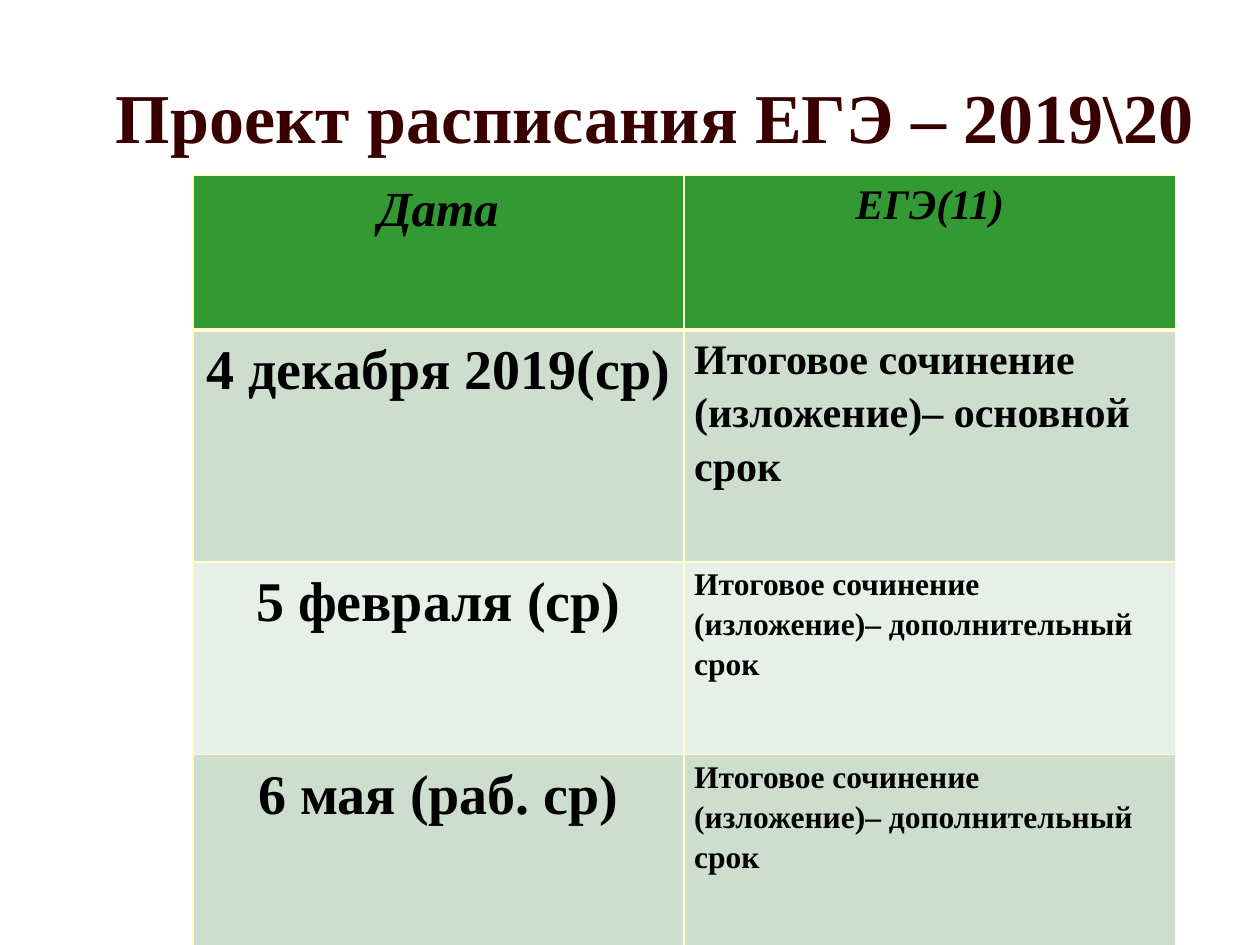
from lxml.etree import SubElement
from pptx import Presentation
from pptx.dml.color import RGBColor
from pptx.enum.text import MSO_ANCHOR, MSO_AUTO_SIZE, PP_ALIGN
from pptx.oxml.ns import qn
from pptx.util import Inches, Pt

FONT = "Times New Roman"
WHITE = RGBColor(0xFF, 0xFF, 0xFF)
MAROON = RGBColor(0x3A, 0x00, 0x00)
BLACK = RGBColor(0x00, 0x00, 0x00)
GREEN = RGBColor(0x33, 0x99, 0x33)
SAGE = RGBColor(0xCE, 0xDE, 0xCE)
PALE = RGBColor(0xE8, 0xEF, 0xE8)
CREAM = RGBColor(0xFF, 0xFF, 0xCC)


def add_text(para, text, size, color, italic=False):
    span = para.add_run()
    span.text = text
    span.font.name = FONT
    span.font.size = Pt(size)
    span.font.bold = True
    span.font.italic = italic
    span.font.color.rgb = color


def add_border(cell, side, width):
    line = SubElement(cell._tc.get_or_add_tcPr(), qn(f"a:ln{side}"), w=str(Pt(width)))
    fill = SubElement(line, qn("a:solidFill"))
    SubElement(fill, qn("a:srgbClr"), val=str(CREAM))


deck = Presentation()
deck.slide_width = Inches(10)
deck.slide_height = Inches(7.5)
page = deck.slides.add_slide(deck.slide_layouts[5])

# Title on a nearly opaque white panel
title = page.shapes.title
title.left, title.top = Inches(0.67), Inches(0.3)
title.width, title.height = Inches(9.05), Inches(1.24)
title.fill.solid()
title.fill.fore_color.rgb = WHITE
panel_color = title.fill._xPr.find(qn("a:solidFill")).find(qn("a:srgbClr"))
SubElement(panel_color, qn("a:alpha"), val="90000")
title.line.color.rgb = WHITE
title.line.width = Pt(1.5)
frame = title.text_frame
frame.word_wrap = True
frame.auto_size = MSO_AUTO_SIZE.NONE
frame.vertical_anchor = MSO_ANCHOR.MIDDLE
frame.paragraphs[0].alignment = PP_ALIGN.CENTER
frame.paragraphs[0].space_before = Pt(0)
add_text(frame.paragraphs[0], "Проект расписания ЕГЭ – 2019\\20", 40, MAROON)

# Exam schedule: row height, fill, then (text, size) for each column
EXTRA = "Итоговое сочинение (изложение)– дополнительный срок"
rows = [
    (1.23, GREEN, ("Дата", 28), ("ЕГЭ(11)", 24)),
    (1.84, SAGE, ("4 декабря 2019(ср)", 32),
     ("Итоговое сочинение (изложение)– основной срок", 24)),
    (1.53, PALE, ("5 февраля (ср)", 32), (EXTRA, 18)),
    (1.53, SAGE, ("6 мая (раб. ср)", 32), (EXTRA, 18)),
]
schedule = page.shapes.add_table(
    len(rows), 2, Inches(1.53), Inches(1.39), Inches(7.8), Inches(6.13)
).table
for column in schedule.columns:
    column.width = Inches(3.9)

for r, (height, color, *entries) in enumerate(rows):
    schedule.rows[r].height = Inches(height)
    header = r == 0
    for c, (text, size) in enumerate(entries):
        cell = schedule.cell(r, c)
        cell.margin_left = cell.margin_right = Inches(0.08)
        cell.margin_top = cell.margin_bottom = 0
        cell.vertical_anchor = MSO_ANCHOR.TOP

        # The header is underlined by a thicker rule
        for side in "LRTB":
            thick = (header and side == "B") or (r == 1 and side == "T")
            add_border(cell, side, 3 if thick else 1)
        cell.fill.solid()
        cell.fill.fore_color.rgb = color

        para = cell.text_frame.paragraphs[0]
        para.alignment = PP_ALIGN.CENTER if header or c == 0 else PP_ALIGN.LEFT
        para.line_spacing = 1.15
        add_text(para, text, size, BLACK, italic=header)

deck.save("out.pptx")
